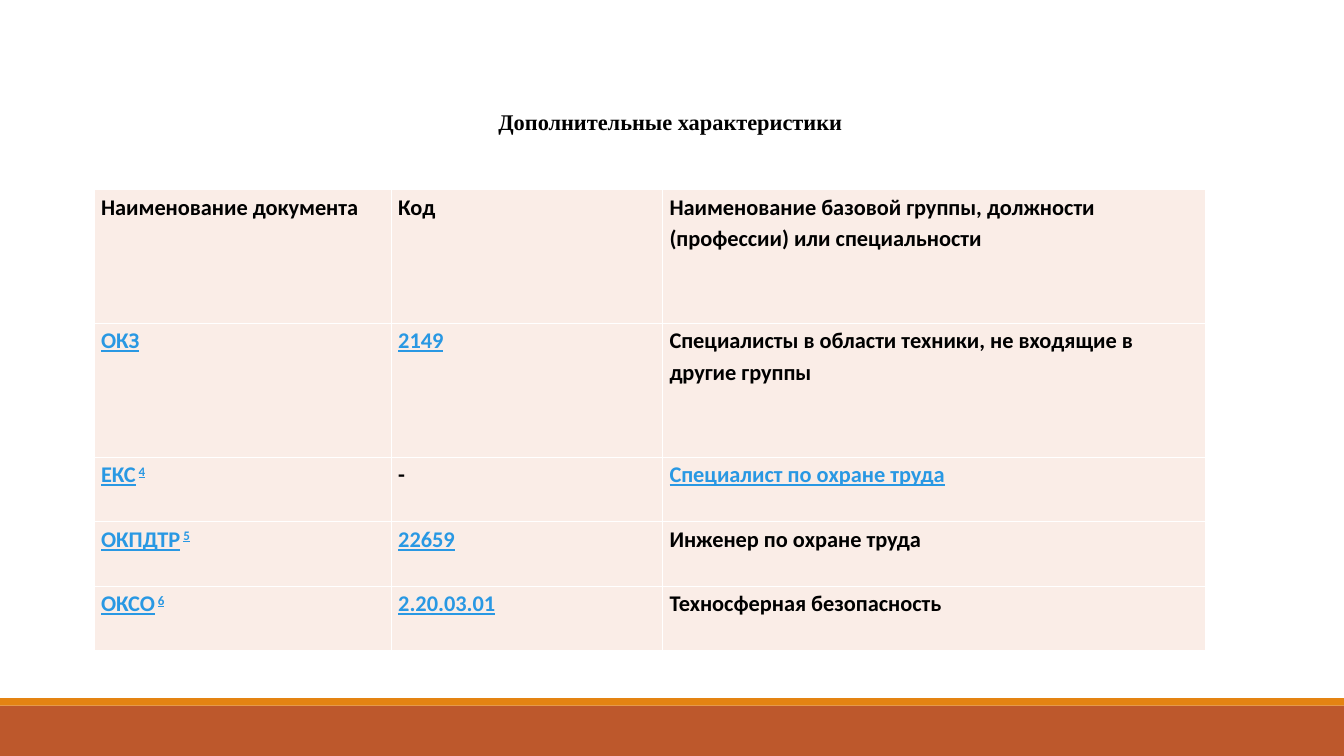
"""Build a slide with a table of additional occupational characteristics."""
from dataclasses import dataclass

from lxml import etree
from pptx import Presentation
from pptx.dml.color import RGBColor
from pptx.enum.shapes import MSO_SHAPE
from pptx.enum.text import MSO_ANCHOR, PP_ALIGN
from pptx.oxml.ns import qn
from pptx.util import Pt

RECTANGLE = MSO_SHAPE.RECTANGLE
TOP = MSO_ANCHOR.TOP
CENTER = PP_ALIGN.CENTER


@dataclass(frozen=True)
class Theme:
    ink: str = "000000"
    link: str = "2998E3"
    cell: str = "FAEDE7"
    border: str = "FFFFFF"
    footer: str = "BD582C"
    accent: str = "E48312"
    title_font: str = "Times New Roman"
    body_font: str = "Calibri"
    size: int = 16
    border_width: int = 1
    line_spacing: float = 1.15


THEME = Theme()
SLIDE_WIDTH, SLIDE_HEIGHT = 960, 540
TITLE = "Дополнительные характеристики"
TITLE_BOX = (96.5, 72, 764.6, 48)
TITLE_INSET = 5
HEADER = ["Наименование документа", "Код",
          "Наименование базовой группы, должности (профессии) или специальности"]
ROWS = [
    ["ОКЗ", "2149", "Специалисты в области техники, не входящие в другие группы"],
    ["ЕКС", "-", "Специалист по охране труда"],
    ["ОКПДТР", "22659", "Инженер по охране труда"],
    ["ОКСО", "2.20.03.01", "Техносферная безопасность"],
]
NOTES = {"ЕКС": "4", "ОКПДТР": "5", "ОКСО": "6"}
LINKS = {"ОКЗ", "2149", "ЕКС", "Специалист по охране труда", "ОКПДТР",
         "22659", "ОКСО", "2.20.03.01"}
TABLE_LEFT, TABLE_TOP = 67.3, 135.5
COLUMN_WIDTHS = [212.3, 193.8, 387.6]
ROW_HEIGHTS = [95.6, 95.6, 46.1, 46.1, 46.1]
CELL_INSET = 4.9
BARS = [(504, 36, THEME.footer), (498.7, 5.3, THEME.accent)]


def add_span(para, text, font, color, underline=False, raised=False):
    span = para.add_run()
    span.text = text
    span.font.name = font
    span.font.size = Pt(THEME.size)
    span.font.bold = True
    span.font.underline = underline
    span.font.color.rgb = RGBColor.from_string(color)
    if raised:
        span.font._element.set("baseline", "30000")


def set_borders(cell):
    properties = cell._tc.get_or_add_tcPr()
    for index, side in enumerate(("lnL", "lnR", "lnT", "lnB")):
        line = etree.Element(qn(f"a:{side}"), w=str(Pt(THEME.border_width)))
        fill = etree.SubElement(line, qn("a:solidFill"))
        etree.SubElement(fill, qn("a:srgbClr"), val=THEME.border)
        properties.insert(index, line)


def fill_cell(cell, text):
    cell.fill.solid()
    cell.fill.fore_color.rgb = RGBColor.from_string(THEME.cell)
    cell.margin_left = cell.margin_right = Pt(CELL_INSET)
    cell.margin_top = cell.margin_bottom = Pt(0)
    set_borders(cell)
    para = cell.text_frame.paragraphs[0]
    para.line_spacing = THEME.line_spacing
    linked = text in LINKS
    add_span(para, text, THEME.body_font, THEME.link if linked else THEME.ink, linked)
    if text in NOTES:
        add_span(para, " ", THEME.body_font, THEME.ink, raised=True)
        add_span(para, NOTES[text], THEME.body_font, THEME.link, True, True)


def add_bars(page):
    for top, height, color in BARS:
        bar = page.shapes.add_shape(RECTANGLE, Pt(0), Pt(top), Pt(SLIDE_WIDTH), Pt(height))
        bar.shadow.inherit = False
        bar.fill.solid()
        bar.fill.fore_color.rgb = RGBColor.from_string(color)
        bar.line.fill.background()


def add_title(page):
    box = page.shapes.title
    box.left, box.top, box.width, box.height = map(Pt, TITLE_BOX)
    frame = box.text_frame
    frame.word_wrap = True
    frame.vertical_anchor = TOP
    frame.margin_top = Pt(TITLE_INSET)
    para = frame.paragraphs[0]
    para.alignment = CENTER
    para.line_spacing = 1.0
    add_span(para, TITLE, THEME.title_font, THEME.ink)


def add_characteristics(page):
    table = page.shapes.add_table(
        len(ROW_HEIGHTS), len(COLUMN_WIDTHS), Pt(TABLE_LEFT), Pt(TABLE_TOP),
        Pt(sum(COLUMN_WIDTHS)), Pt(sum(ROW_HEIGHTS))).table
    for column, width in zip(table.columns, COLUMN_WIDTHS):
        column.width = Pt(width)
    for row, height, texts in zip(table.rows, ROW_HEIGHTS, [HEADER, *ROWS]):
        row.height = Pt(height)
        for cell, text in zip(row.cells, texts):
            fill_cell(cell, text)


def main():
    deck = Presentation()
    deck.slide_width, deck.slide_height = Pt(SLIDE_WIDTH), Pt(SLIDE_HEIGHT)
    page = deck.slides.add_slide(deck.slide_layouts[5])
    add_bars(page)
    add_characteristics(page)
    add_title(page)
    deck.save("out.pptx")


if __name__ == "__main__":
    main()
